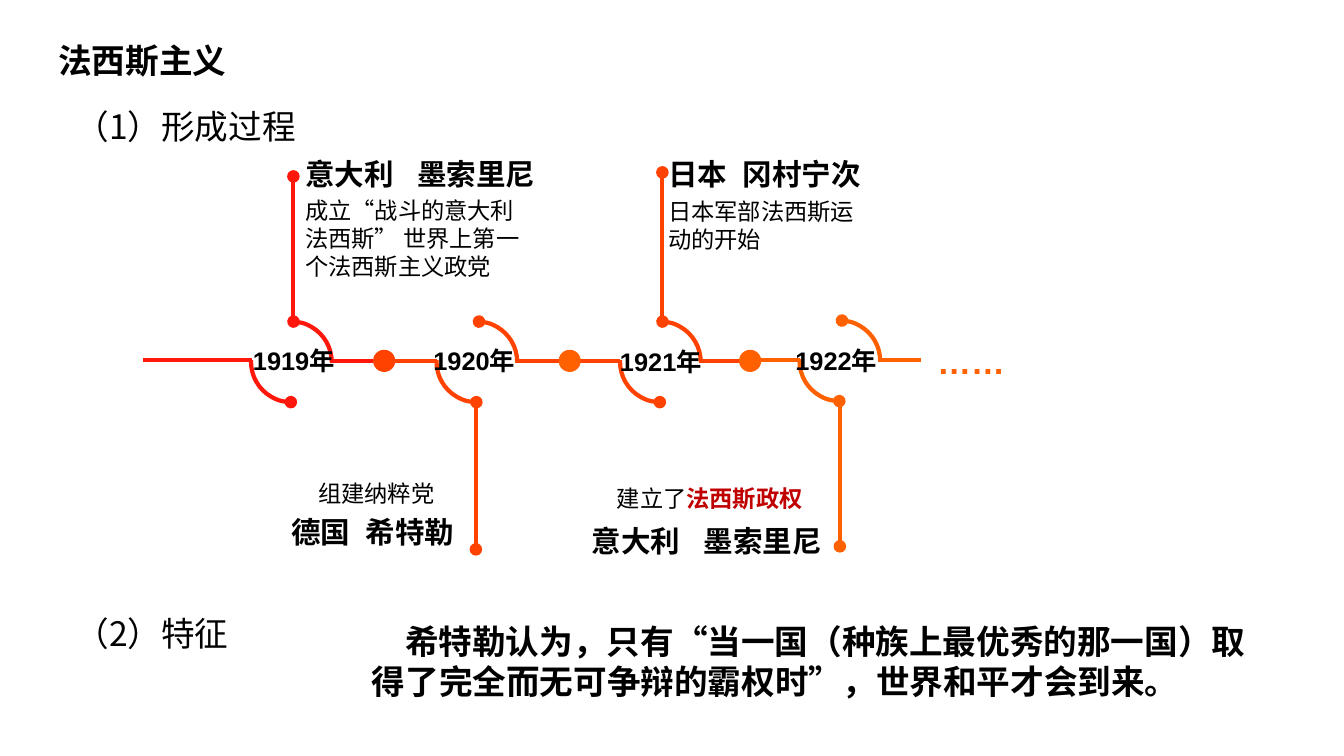
from pptx import Presentation
from pptx.dml.color import RGBColor
from pptx.enum.shapes import MSO_CONNECTOR as Link, MSO_SHAPE as Shape
from pptx.enum.text import MSO_AUTO_SIZE as Fit
from pptx.oxml.ns import qn
from pptx.util import Inches, Pt
from lxml.etree import SubElement

RED, FLAME, ORANGE = "FF170C", "FF4200", "FF6000"
BLACK, DARK = "000000", "C00000"
SANS, LATIN = "Noto Sans CJK SC", "Arial"
SIDE = 0.8  # width of a year's arcs
DOT = 0.22

# year, left and top of arcs, colour, left and top of label
YEARS = [
    ("1919年", 2.49, 3.19, RED, 2.41, 3.37),
    ("1920年", 4.33, 3.19, FLAME, 4.2, 3.37),
    ("1921年", 6.15, 3.19, FLAME, 6.05, 3.38),
    ("1922年", 7.93, 3.18, ORANGE, 7.79, 3.37),
]
# x, start y, end y, colour
STEMS = [
    (2.91, 3.19, 1.75, RED),
    (4.72, 3.98, 5.45, FLAME),
    (6.57, 3.18, 1.71, FLAME),
    (8.33, 3.99, 5.42, ORANGE),
]
# start x, end x, y, colour
AXIS = [
    (1.42, 2.5, 3.57, RED),
    (3.27, 3.7, 3.58, RED),
    (3.92, 4.33, 3.58, FLAME),
    (5.11, 5.54, 3.58, FLAME),
    (5.74, 6.15, 3.58, FLAME),
    (6.93, 7.36, 3.58, FLAME),
    (7.52, 7.93, 3.57, ORANGE),
    (8.71, 9.13, 3.57, ORANGE),
]
DOTS = [(3.7, FLAME), (5.54, ORANGE), (7.33, ORANGE)]
ARCS = [(54.434, 109.45), (163.834, 215.95)]

# box, text
HEADS = [
    ((0.65, 1, 6.42, 0.5), "（1）形成过程"),
    ((0.65, 6.03, 6.42, 0.5), "（2）特征"),
]
TITLE = ((0.48, 0.35, 2.57, 0.5), "法西斯主义")
QUOTE = ((3.59, 6.11, 8.95, 0.95),
         "希特勒认为，只有“当一国（种族上最优秀的那一国）取得了完全而无可争辩的霸权时”，世界和平才会到来。")
EVENTS = [
    ((2.93, 1.9, 2.47, 0.94), "成立“战斗的意大利法西斯” 世界上第一个法西斯主义政党", ""),
    ((3.06, 4.71, 1.36, 0.38), "组建纳粹党", ""),
    ((6.53, 1.91, 2.15, 0.66), "日本军部法西斯运动的开始", ""),
    ((6.02, 4.75, 2.47, 0.38), "建立了", "法西斯政权"),
]
# box, country, leader
NAMES = [
    ((2.93, 1.5, 2.63, 0.45), "意大利", "墨索里尼"),
    ((2.79, 5.05, 1.98, 0.45), "德国", "希特勒"),
    ((6.53, 1.5, 2.63, 0.45), "日本", "冈村宁次"),
    ((5.77, 5.14, 2.63, 0.45), "意大利", "墨索里尼"),
]


def color(code):
    return RGBColor.from_string(code)


def style(run, size, font, code, bold, asian=SANS):
    run.font.size, run.font.name, run.font.bold = Pt(size), font, bold
    run.font.color.rgb = color(code)
    SubElement(run.font._element, qn("a:ea"), typeface=asian)


def write(box, text, size, font=SANS, code=BLACK, bold=False, asian=SANS):
    """Add a text box and return its paragraph."""
    frame = slide.shapes.add_textbox(*map(Inches, box)).text_frame
    frame.word_wrap = True
    frame.auto_size = Fit.SHAPE_TO_FIT_TEXT
    par = frame.paragraphs[0]
    par.text = text
    for run in par.runs:
        style(run, size, font, code, bold, asian)
    return par


def stroke(item, code, end=None):
    """Set the line, with a round cap at headEnd or tailEnd if named."""
    item.line.color.rgb = color(code)
    item.line.width = Pt(3)
    if end:
        SubElement(item.line._get_or_add_ln(), qn("a:" + end), type="oval")


def link(x1, y1, x2, y2, code, end=None):
    item = slide.shapes.add_connector(Link.STRAIGHT, *map(Inches, (x1, y1, x2, y2)))
    stroke(item, code, end)
    SubElement(item._element.spPr, qn("a:effectLst"))


def shape(kind, x, y, size, fill):
    item = slide.shapes.add_shape(kind, *map(Inches, (x, y, size, size)))
    item.shadow.inherit = False
    item.fill.solid()
    item.fill.fore_color.rgb = color(fill)
    return item


deck = Presentation()
deck.slide_width, deck.slide_height = Inches(13.33), Inches(7.5)
slide = deck.slides.add_slide(deck.slide_layouts[6])

for x, start, end, code in STEMS:
    link(x, start, x, end, code, "tailEnd")
for year, x, y, code, *label in YEARS:
    for angles in ARCS:
        arc = shape(Shape.ARC, x, y, SIDE, "FFFFFF")
        arc.adjustments[0], arc.adjustments[1] = angles
        stroke(arc, code, "headEnd")
for start, end, y, code in AXIS:
    link(start, y, end, y, code)
for x, code in DOTS:
    shape(Shape.OVAL, x, 3.47, DOT, code).line.fill.background()

for year, x, y, code, left, top in YEARS:
    write((left, top, 1.18, 0.4), year, 18.1, LATIN, bold=True)
write((9.2, 3.33, 1.46, 0.5), "……", 24.1, LATIN, ORANGE, True, LATIN)

for box, text, key in EVENTS:
    par = write(box, text, 16.6)
    if key:
        run = par.add_run()
        run.text = key
        style(run, 16.6, SANS, DARK, True)
for box, land, leader in NAMES:
    par = write(box, land + "\t" + leader, 21.1, LATIN, bold=True)
    tabs = SubElement(par._p.get_or_add_pPr(), qn("a:tabLst"))
    SubElement(tabs, qn("a:tab"), pos=str(Inches(0.37 * len(land))), algn="l")

write(*TITLE, 24, bold=True)
for box, text in HEADS:
    write(box, text, 24)
quote = write(*QUOTE, 24, bold=True)
quote._p.get_or_add_pPr().set("indent", str(Inches(0.33)))

deck.save("out.pptx")
